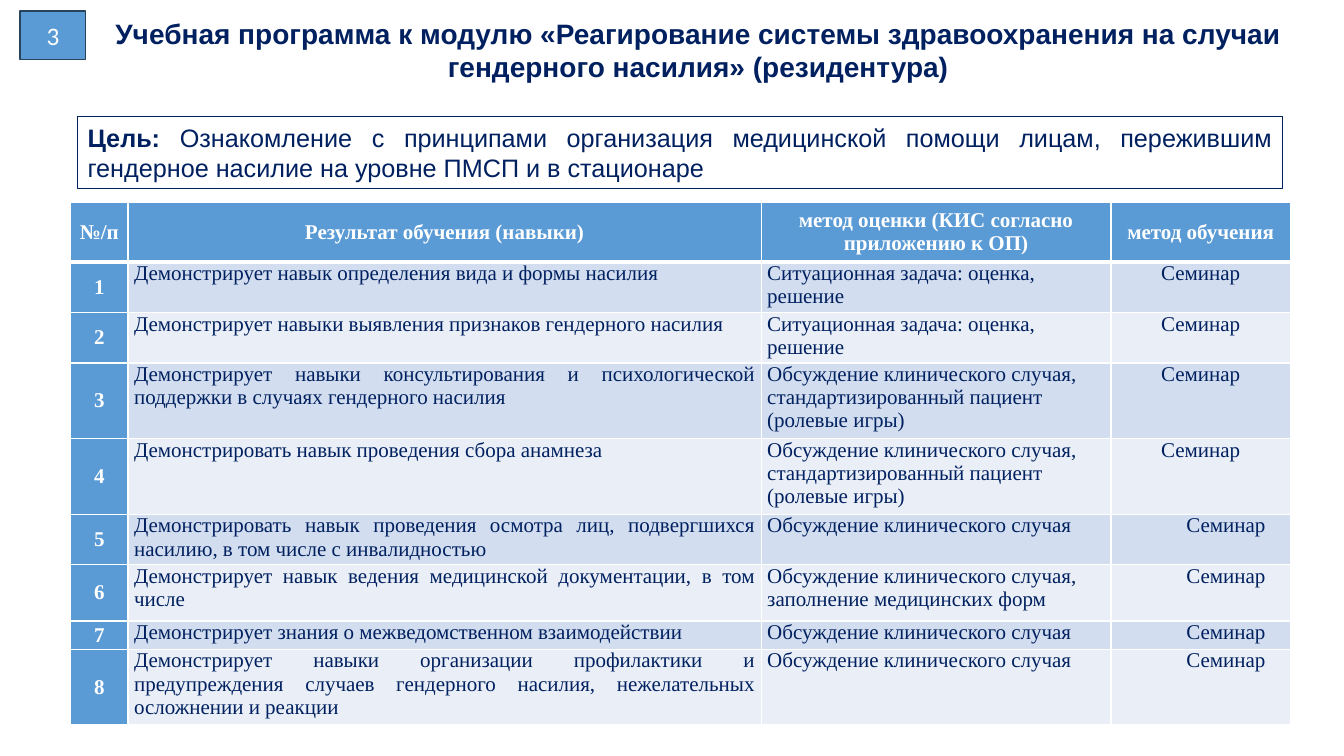
import pptx
import pptx.util
import pptx.dml.color
import pptx.enum.shapes
import pptx.enum.text
import pptx.oxml.ns
import lxml.etree
from dataclasses import dataclass

Inches = pptx.util.Inches
Pt = pptx.util.Pt
ALIGN = pptx.enum.text.PP_ALIGN
ANCHOR = pptx.enum.text.MSO_ANCHOR


@dataclass(frozen=True)
class Theme:
    navy: str = "002060"
    blue: str = "5B9BD5"
    edge: str = "28445D"
    white: str = "FFFFFF"
    odd: str = "D2DEEF"
    even: str = "EAEFF7"
    sans: str = "Arial"
    serif: str = "Times New Roman"
    plain: str = "Calibri"
    title: int = 20
    body: int = 18
    cell: int = 15


THEME = Theme()

COLS = [0.57, 6.28, 3.47, 1.78]
ROWS = [0.59, 0.45, 0.45, 0.7, 0.7, 0.45, 0.56, 0.28, 0.7]
HEAD = ["№/п", "Результат обучения (навыки)",
        "метод оценки (КИС согласно приложению к ОП)", "метод обучения"]
TASK = "Ситуационная задача: оценка, решение"
CASE = "Обсуждение клинического случая"
ROLE = CASE + ", стандартизированный пациент (ролевые игры)"
SKILLS = [
    ("Демонстрирует навык определения вида и формы насилия", TASK),
    ("Демонстрирует навыки выявления признаков гендерного насилия", TASK),
    ("Демонстрирует навыки консультирования и психологической поддержки "
     "в случаях гендерного насилия", ROLE),
    ("Демонстрировать навык проведения сбора анамнеза", ROLE),
    ("Демонстрировать навык проведения осмотра лиц, подвергшихся насилию, "
     "в том числе с инвалидностью", CASE),
    ("Демонстрирует навык ведения медицинской документации, в том числе",
     CASE + ", заполнение медицинских форм"),
    ("Демонстрирует знания о межведомственном взаимодействии", CASE),
    ("Демонстрирует навыки организации профилактики и предупреждения случаев "
     "гендерного насилия, нежелательных осложнении и реакции", CASE),
]


def color(code):
    return pptx.dml.color.RGBColor.from_string(code)


def write(frame, runs, font, size, ink, align):
    """Fill the first paragraph with (text, bold) runs."""
    para = frame.paragraphs[0]
    para.alignment = align
    for text, bold in runs:
        run = para.add_run()
        run.text = text
        run.font.name = font
        run.font.size = Pt(size)
        run.font.bold = bold
        run.font.color.rgb = color(ink)
    return para


def add_text(slide, box, runs, size, align):
    frame = slide.shapes.add_textbox(*map(Inches, box)).text_frame
    frame.word_wrap = True
    write(frame, runs, THEME.sans, size, THEME.navy, align)


def add_box(slide, box, runs, font, ink, line, width, align, anchor, fill=None):
    kind = pptx.enum.shapes.MSO_SHAPE.RECTANGLE
    shape = slide.shapes.add_shape(kind, *map(Inches, box))
    shape.shadow.inherit = False
    if fill:
        shape.fill.solid()
        shape.fill.fore_color.rgb = color(fill)
    else:
        shape.fill.background()
    shape.line.color.rgb = color(line)
    shape.line.width = Pt(width)
    frame = shape.text_frame
    frame.word_wrap = True
    frame.vertical_anchor = anchor
    write(frame, runs, font, THEME.body, ink, align)


def add_edge(cell, side, width):
    name = pptx.oxml.ns.qn
    props = cell._tc.get_or_add_tcPr()
    line = lxml.etree.SubElement(props, name("a:ln" + side), w=str(Pt(width)))
    fill = lxml.etree.SubElement(line, name("a:solidFill"))
    lxml.etree.SubElement(fill, name("a:srgbClr"), val=THEME.white)


def fill_cell(cell, text, row, col):
    # Borders precede the fill; a thick rule lies under the header
    for side in "LRTB":
        thick = (row, side) in ((0, "B"), (1, "T"))
        add_edge(cell, side, 3 if thick else 1)
    strong = row == 0 or col == 0
    band = THEME.odd if row % 2 else THEME.even
    cell.fill.solid()
    cell.fill.fore_color.rgb = color(THEME.blue if strong else band)
    cell.margin_left = cell.margin_right = Inches(0.06)
    cell.margin_top = cell.margin_bottom = 0
    cell.vertical_anchor = ANCHOR.MIDDLE if strong else ANCHOR.TOP
    if strong or col == 3:
        align = ALIGN.CENTER
    else:
        align = ALIGN.JUSTIFY if col == 1 and row > 1 else ALIGN.LEFT
    ink = THEME.white if strong else THEME.navy
    para = write(cell.text_frame, [(text, strong)], THEME.serif,
                 THEME.cell, ink, align)
    if col == 3 and row >= 5:
        para._p.get_or_add_pPr().set("marL", str(Inches(0.5)))


def add_grid(slide, left, top):
    data = [HEAD]
    for num, (skill, check) in enumerate(SKILLS, 1):
        data.append([str(num), skill, check, "Семинар"])
    size = map(Inches, (left, top, sum(COLS), sum(ROWS)))
    table = slide.shapes.add_table(len(ROWS), len(COLS), *size).table
    for col, width in enumerate(COLS):
        table.columns[col].width = Inches(width)
    for row, texts in enumerate(data):
        table.rows[row].height = Inches(ROWS[row])
        for col, text in enumerate(texts):
            fill_cell(table.cell(row, col), text, row, col)


def main():
    deck = pptx.Presentation()
    deck.slide_width = Inches(13.33)
    deck.slide_height = Inches(7.5)
    slide = deck.slides.add_slide(deck.slide_layouts[6])

    # Title
    add_text(slide, (0.85, 0.11, 12.15, 0.77),
             [("Учебная программа к модулю «Реагирование системы здравоохранения "
               "на случаи гендерного насилия» (резидентура)", True)],
             THEME.title, ALIGN.CENTER)

    # Goal
    add_box(slide, (0.77, 1.16, 11.95, 0.71),
            [("Цель: ", True),
             ("Ознакомление с принципами организация медицинской помощи лицам, "
              "пережившим гендерное насилие на уровне ПМСП и в стационаре", False)],
            THEME.sans, THEME.navy, THEME.navy, 0.75, ALIGN.JUSTIFY, ANCHOR.TOP)

    # Page number
    add_box(slide, (0.2, 0.11, 0.65, 0.48), [("3", False)], THEME.plain,
            THEME.white, THEME.edge, 1, ALIGN.CENTER, ANCHOR.MIDDLE, THEME.blue)

    # Skills table
    add_grid(slide, 0.7, 2.01)
    deck.save("out.pptx")


if __name__ == "__main__":
    main()
